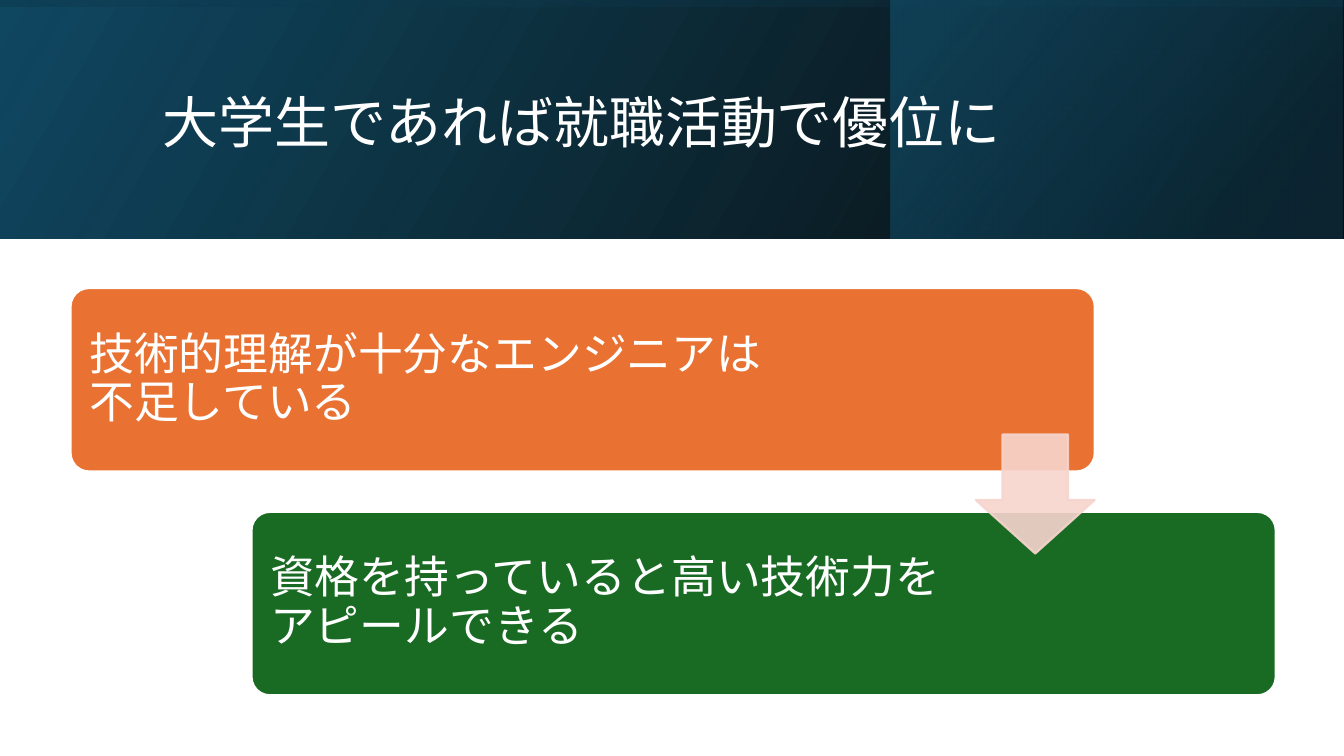
from lxml import etree
from pptx import Presentation
from pptx.dml.color import RGBColor
from pptx.enum.shapes import MSO_SHAPE
from pptx.enum.text import MSO_ANCHOR
from pptx.oxml import parse_xml
from pptx.oxml.ns import nsdecls, qn
from pptx.util import Cm, Pt

RECTANGLE = MSO_SHAPE.RECTANGLE
ROUNDED = MSO_SHAPE.ROUNDED_RECTANGLE
DOWN_ARROW = MSO_SHAPE.DOWN_ARROW
MIDDLE = MSO_ANCHOR.MIDDLE

FONT = "Noto Sans CJK JP"
COLORS = {
    "white": "FFFFFF", "black": "000000", "navy": "104862",
    "deep": "0B3041", "teal": "156082", "orange": "E97132",
    "green": "196B24", "pink": "F7D5CE",
}
TITLE = "大学生であれば就職活動で優位に"
# text, card colour, label width
STEPS = [
    ("技術的理解が十分なエンジニアは\n不足している", "orange", 21.03),
    ("資格を持っていると高い技術力を\nアピールできる", "green", 17.98),
]

PAGE_WIDTH, PAGE_HEIGHT = 33.87, 19.05
BAND_HEIGHT = 6.02
SHADE_SHIFT = (PAGE_WIDTH - BAND_HEIGHT) / 2
# frame, rotation, gradient angle, stops of (position, colour, opacity)
BANDS = [
    ((0, 0, PAGE_WIDTH, BAND_HEIGHT), 0, 330,
     [(0, "black", 96), (100, "navy", 100)]),
    ((22.45, 0, 11.38, BAND_HEIGHT), 0, 320,
     [(19, "deep", 68), (100, "teal", 48)]),
    ((SHADE_SHIFT, -SHADE_SHIFT, BAND_HEIGHT, PAGE_WIDTH), 270, 350,
     [(23, "navy", 16), (99, "black", 45)]),
]
CARD_LEFT, CARD_TOP, CARD_WIDTH, CARD_HEIGHT = 1.78, 7.26, 25.81, 4.62
STEP_RIGHT, STEP_DOWN = 4.56, 5.64
LABEL_INSET = 0.14
ARROW_SIZE = 3


def rgb(name):
    return RGBColor.from_string(COLORS[name])


def add_shape(page, kind, frame, adjustments=()):
    shape = page.shapes.add_shape(kind, *map(Cm, frame))
    shape.shadow.inherit = False
    for index, value in enumerate(adjustments):
        shape.adjustments[index] = value
    return shape


def paint(shape, fill, line):
    shape.fill.solid()
    shape.fill.fore_color.rgb = rgb(fill)
    shape.line.color.rgb = rgb(line)
    shape.line.width = Pt(1.5)


def add_band(page, frame, rotation, angle, stops):
    """Add a mirrored rectangle with a translucent gradient."""
    band = add_shape(page, RECTANGLE, frame)
    band.line.fill.background()
    band.rotation = rotation
    properties = band._element.spPr
    properties.find(qn("a:xfrm")).set("flipH", "1")
    stop_xml = "".join(
        f'<a:gs pos="{position * 1000}"><a:srgbClr val="{COLORS[color]}">'
        f'<a:alpha val="{opacity * 1000}"/></a:srgbClr></a:gs>'
        for position, color, opacity in stops)
    gradient = parse_xml(
        f'<a:gradFill {nsdecls("a")} rotWithShape="1"><a:gsLst>{stop_xml}</a:gsLst>'
        f'<a:lin ang="{angle * 60000}" scaled="0"/></a:gradFill>')
    properties.find(qn("a:prstGeom")).addnext(gradient)


def add_text(page, text, frame, size, inset=None):
    box = page.shapes.add_textbox(*map(Cm, frame))
    text_frame = box.text_frame
    text_frame.word_wrap = True
    text_frame.vertical_anchor = MIDDLE
    if inset is not None:
        for side in ("left", "top", "right", "bottom"):
            setattr(text_frame, f"margin_{side}", Cm(inset))
    para = text_frame.paragraphs[0]
    para.text = text
    para.line_spacing = 0.9
    for span in para.runs:
        span.font.size = Pt(size)
        span.font.name = FONT
        span.font.color.rgb = rgb("white")
        east_asian = etree.Element(qn("a:ea"), typeface=FONT)
        span.font._element.find(qn("a:latin")).addnext(east_asian)


def add_step(page, index, text, color, label_width):
    left = CARD_LEFT + index * STEP_RIGHT
    top = CARD_TOP + index * STEP_DOWN
    card = add_shape(page, ROUNDED, (left, top, CARD_WIDTH, CARD_HEIGHT), [0.1])
    paint(card, color, "white")
    label_frame = (left + LABEL_INSET, top + LABEL_INSET,
                   label_width, CARD_HEIGHT - 2 * LABEL_INSET)
    add_text(page, text, label_frame, 32, inset=0.33)


def add_arrow(page):
    """Add the translucent arrow centred on the gap between the cards."""
    left = CARD_LEFT + CARD_WIDTH - ARROW_SIZE
    gap_middle = CARD_TOP + (CARD_HEIGHT + STEP_DOWN) / 2
    frame = (left, gap_middle - ARROW_SIZE / 2 + 0.06, ARROW_SIZE, ARROW_SIZE)
    arrow = add_shape(page, DOWN_ARROW, frame, [0.55, 0.45])
    paint(arrow, "pink", "pink")
    for color in arrow._element.spPr.iter(qn("a:srgbClr")):
        etree.SubElement(color, qn("a:alpha"), val="90000")


def main():
    deck = Presentation()
    deck.slide_width, deck.slide_height = Cm(PAGE_WIDTH), Cm(PAGE_HEIGHT)
    page = deck.slides.add_slide(deck.slide_layouts[6])
    for band in BANDS:
        add_band(page, *band)
    add_text(page, TITLE, (3.84, 0.97, 27, 4.37), 40)
    for index, step in enumerate(STEPS):
        add_step(page, index, *step)
    add_arrow(page)
    deck.save("out.pptx")


if __name__ == "__main__":
    main()
